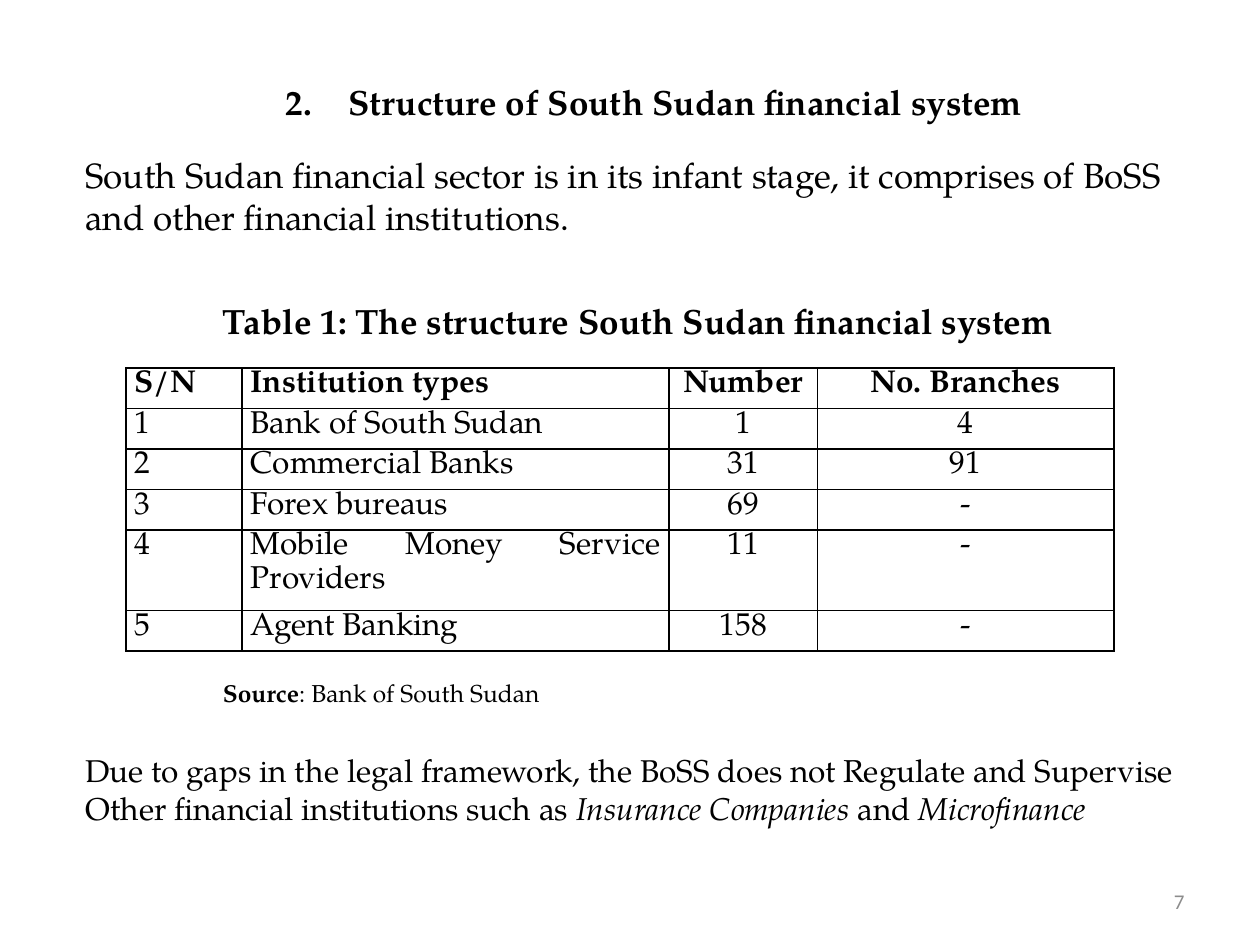
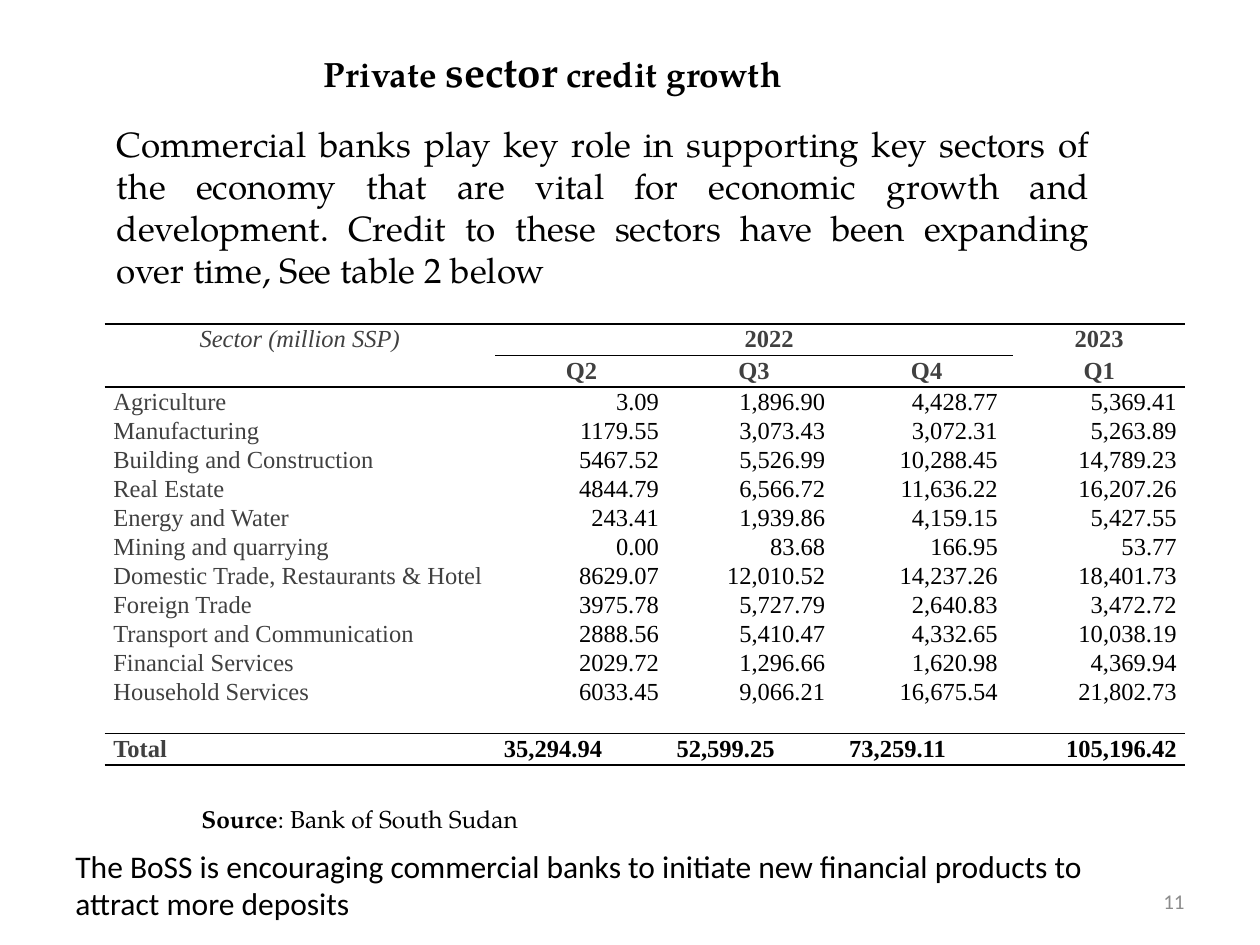
"""Build two slides on the structure of the financial system and private sector credit."""
from dataclasses import dataclass
from typing import Optional

from lxml.etree import SubElement
from pptx import Presentation
from pptx.dml.color import RGBColor
from pptx.enum.text import MSO_ANCHOR, PP_ALIGN
from pptx.oxml.ns import qn
from pptx.slide import Slide
from pptx.table import Table, _Cell
from pptx.text.text import TextFrame, _Paragraph
from pptx.util import Inches, Pt


@dataclass(frozen=True)
class Theme:
    """Colours, fonts and type sizes shared by the slides."""
    ink: str = "000000"
    label: str = "404040"
    page: str = "8C8C8C"
    serif: str = "TeX Gyre Pagella"
    figures: str = "Times New Roman"
    sans: str = "Calibri"
    accent_size: float = 24
    lead_size: float = 20
    body_size: float = 18
    small_size: float = 14
    page_size: float = 12
    cell_spacing: float = 1.07
    thin: float = 1
    thick: float = 1.5


THEME = Theme()


@dataclass(frozen=True)
class Span:
    """A stretch of text in one style."""
    text: str
    size: float = THEME.lead_size
    bold: bool = False
    italic: bool = False
    font: str = THEME.serif
    color: str = THEME.ink


@dataclass(frozen=True)
class Block:
    """A text box holding one paragraph."""
    left: float
    top: float
    width: float
    height: float
    spans: tuple[Span, ...]
    align: PP_ALIGN = PP_ALIGN.LEFT
    indent: float = 0
    number: Optional[int] = None
    anchor: MSO_ANCHOR = MSO_ANCHOR.TOP


@dataclass(frozen=True)
class Entry:
    """A table cell whose lines share one style."""
    lines: tuple[str, ...]
    align: PP_ALIGN
    size: float
    font: str
    bold: bool = False
    italic: bool = False
    color: str = THEME.ink
    inset_left: float = 0.07
    inset_right: float = 0.07


@dataclass(frozen=True)
class Grid:
    """A table with the width of each horizontal rule by boundary and column."""
    left: float
    top: float
    columns: tuple[float, ...]
    rows: tuple[float, ...]
    entries: dict[tuple[int, int], Entry]
    rules: tuple[tuple[float, ...], ...]
    side_rule: float = 0
    merges: tuple[tuple[int, int, int, int], ...] = ()


def add_span(paragraph: _Paragraph, span: Span) -> None:
    """Append a styled run to a paragraph."""
    run = paragraph.add_run()
    run.text = span.text
    run.font.size = Pt(span.size)
    run.font.name = span.font
    run.font.bold = span.bold
    run.font.italic = span.italic
    run.font.color.rgb = RGBColor.from_string(span.color)


def indent_paragraph(paragraph: _Paragraph, block: Block) -> None:
    """Indent a heading and number it when it has a number."""
    properties = paragraph._p.get_or_add_pPr()
    properties.set("marL", str(Inches(block.indent)))
    if block.number is not None:
        properties.set("indent", str(Inches(-0.5)))
        SubElement(properties, qn("a:buFont"), typeface="+mj-lt")
        SubElement(properties, qn("a:buAutoNum"), type="arabicPeriod", startAt=str(block.number))


def add_block(slide: Slide, block: Block) -> None:
    """Draw a text box."""
    frame: TextFrame = slide.shapes.add_textbox(
        Inches(block.left), Inches(block.top), Inches(block.width), Inches(block.height)).text_frame
    frame.word_wrap = True
    frame.vertical_anchor = block.anchor
    paragraph = frame.paragraphs[0]
    if block.indent:
        indent_paragraph(paragraph, block)
    paragraph.alignment = block.align
    for span in block.spans:
        add_span(paragraph, span)


def add_page_number(slide: Slide, number: int) -> None:
    """Draw the page number at the lower right."""
    span = Span(str(number), THEME.page_size, font=THEME.sans, color=THEME.page)
    add_block(slide, Block(7.17, 6.95, 2.33, 0.4, (span,), PP_ALIGN.RIGHT, anchor=MSO_ANCHOR.MIDDLE))


def add_source(slide: Slide, left: float, top: float) -> None:
    """Draw the source line below a table."""
    spans = (Span("Source", THEME.small_size, bold=True),
             Span(": Bank of South Sudan", THEME.small_size))
    add_block(slide, Block(left, top, 6.5, 0.34, spans, PP_ALIGN.JUSTIFY))


def set_borders(cell: _Cell, side: float, top: float, bottom: float) -> None:
    """Rule the edges of a cell, leaving edges of zero width blank."""
    properties = cell._tc.get_or_add_tcPr()
    for tag, width in (("a:lnL", side), ("a:lnR", side), ("a:lnT", top), ("a:lnB", bottom)):
        line = SubElement(properties, qn(tag), w=str(Pt(width)))
        if width:
            fill = SubElement(line, qn("a:solidFill"))
            SubElement(fill, qn("a:srgbClr"), val=THEME.ink)
        else:
            SubElement(line, qn("a:noFill"))


def fill_cell(cell: _Cell, entry: Entry) -> None:
    """Write the lines of an entry into a cell."""
    cell.margin_left, cell.margin_right = Inches(entry.inset_left), Inches(entry.inset_right)
    cell.margin_top = cell.margin_bottom = 0
    frame = cell.text_frame
    for index, line in enumerate(entry.lines):
        paragraph = frame.add_paragraph() if index else frame.paragraphs[0]
        paragraph.alignment = entry.align
        paragraph.line_spacing = THEME.cell_spacing
        add_span(paragraph, Span(line, entry.size, entry.bold, entry.italic, entry.font, entry.color))


def add_grid(slide: Slide, grid: Grid) -> None:
    """Draw a ruled table."""
    table: Table = slide.shapes.add_table(
        len(grid.rows), len(grid.columns), Inches(grid.left), Inches(grid.top),
        Inches(sum(grid.columns)), Inches(sum(grid.rows))).table
    table.first_row = table.horz_banding = False
    for column, width in zip(table.columns, grid.columns):
        column.width = Inches(width)
    for row, height in zip(table.rows, grid.rows):
        row.height = Inches(height)
    for top, left, bottom, right in grid.merges:
        table.cell(top, left).merge(table.cell(bottom, right))
    for row in range(len(grid.rows)):
        for column in range(len(grid.columns)):
            cell = table.cell(row, column)
            last = row + (cell.span_height if cell.is_merge_origin else 1)
            set_borders(cell, grid.side_rule, grid.rules[row][column], grid.rules[last][column])
            cell.fill.background()
            if (row, column) in grid.entries:
                fill_cell(cell, grid.entries[row, column])


INSTITUTIONS = (
    ("S/N", "Institution types", "Number", "No. Branches"),
    ("1", "Bank of South Sudan", "1", "4"),
    ("2", "Commercial Banks", "31", "91"),
    ("3", "Forex bureaus", "69", "-"),
    ("4", "Mobile Money Service Providers", "11", "-"),
    ("5", "Agent Banking", "158", "-"),
)

SECTOR_CREDIT = (
    ("Agriculture", "3.09", "1,896.90", "4,428.77", "5,369.41"),
    ("Manufacturing", "1179.55", "3,073.43", "3,072.31", "5,263.89"),
    ("Building and Construction", "5467.52", "5,526.99", "10,288.45", "14,789.23"),
    ("Real Estate", "4844.79", "6,566.72", "11,636.22", "16,207.26"),
    ("Energy and Water", "243.41", "1,939.86", "4,159.15", "5,427.55"),
    ("Mining and quarrying", "0.00", "83.68", "166.95", "53.77"),
    ("Domestic Trade, Restaurants & Hotel", "8629.07", "12,010.52", "14,237.26", "18,401.73"),
    ("Foreign Trade", "3975.78", "5,727.79", "2,640.83", "3,472.72"),
    ("Transport and Communication", "2888.56", "5,410.47", "4,332.65", "10,038.19"),
    ("Financial Services", "2029.72", "1,296.66", "1,620.98", "4,369.94"),
    ("Household Services", "6033.45", "9,066.21", "16,675.54", "21,802.73"),
)
TOTALS = ("Total", "35,294.94", "52,599.25", "73,259.11", "105,196.42")


def institution_grid() -> Grid:
    """Lay out the table of institution types."""
    entries = {
        (row, column): Entry((text,), PP_ALIGN.JUSTIFY if column < 2 else PP_ALIGN.CENTER,
                             THEME.body_size, THEME.serif, bold=row == 0)
        for row, texts in enumerate(INSTITUTIONS) for column, text in enumerate(texts)}
    return Grid(1, 2.92, (0.92, 3.39, 1.18, 2.35), (0.32, 0.32, 0.32, 0.32, 0.64, 0.32),
                entries, ((THEME.thin,) * 4,) * 7, THEME.thin)


def credit_grid() -> Grid:
    """Lay out the table of credit by sector and quarter."""
    def entry(*lines: str, align: PP_ALIGN = PP_ALIGN.CENTER, **style) -> Entry:
        """Make an entry in the style of this table."""
        return Entry(lines, align, THEME.small_size, THEME.figures, **style)

    heading = {"bold": True, "color": THEME.label}
    entries = {
        (0, 0): entry("Sector (million SSP)", italic=True, color=THEME.label),
        (0, 1): entry("2022", inset_left=0.31, **heading),
        (0, 4): entry("2023", **heading),
    }
    for column, quarter in enumerate(("Q2", "Q3", "Q4", "Q1"), start=1):
        entries[1, column] = entry(quarter, **heading)
    for column, (lines, total) in enumerate(zip(zip(*SECTOR_CREDIT), TOTALS)):
        color = THEME.ink if column else THEME.label
        entries[2, column] = entry(*lines, align=PP_ALIGN.RIGHT if column else PP_ALIGN.LEFT,
                                   color=color, inset_right=0.12 if column in (2, 3) else 0.07)
        entries[3, column] = entry(total, align=PP_ALIGN.RIGHT if column == 4 else PP_ALIGN.LEFT,
                                   bold=True, color=color)
    full, quarters = (THEME.thin,) * 5, (0, THEME.thin, THEME.thin, THEME.thin, 0)
    return Grid(0.83, 2.57, (3.1, 1.37, 1.37, 1.37, 1.37), (0.25, 0.25, 2.75, 0.25), entries,
                (full, quarters, (THEME.thick,) * 5, full, full), merges=((0, 0, 1, 0), (0, 1, 0, 3)))


def build_structure(slide: Slide) -> None:
    """Draw the slide on the structure of the financial system."""
    body = THEME.body_size
    add_page_number(slide, 7)
    add_block(slide, Block(1.67, 0.59, 6.7, 0.44, (
        Span("Structure of South Sudan financial system", bold=True),), indent=1, number=2))
    add_block(slide, Block(0.58, 1.17, 8.83, 0.77, (
        Span("South Sudan financial sector is in its infant stage, it comprises of BoSS "
             "and other financial institutions."),)))
    add_block(slide, Block(0.58, 5.91, 8.83, 1.01, (
        Span("Due to gaps in the legal framework, the BoSS does not Regulate and Supervise "
             "Other financial institutions such as ", body),
        Span("Insurance Companies ", body, italic=True),
        Span("and ", body),
        Span("Microfinance", body, italic=True)), PP_ALIGN.JUSTIFY))
    add_grid(slide, institution_grid())
    add_block(slide, Block(1.17, 2.33, 7.5, 0.44, (
        Span("Table 1: The structure South Sudan financial system", bold=True),), indent=0.5))
    add_source(slide, 1.67, 5.33)


def build_credit(slide: Slide) -> None:
    """Draw the slide on private sector credit growth."""
    add_page_number(slide, 11)
    add_block(slide, Block(1.97, 0.31, 5.42, 0.5, (
        Span("Private ", bold=True),
        Span("sector", THEME.accent_size, bold=True),
        Span(" credit growth", bold=True)), indent=0.5))
    add_block(slide, Block(0.5, 6.67, 8.25, 0.71, (
        Span("The BoSS is encouraging commercial banks to initiate new financial products to "
             "attract more deposits", THEME.body_size, font=THEME.sans),)))
    add_block(slide, Block(0.83, 0.92, 7.92, 1.45, (
        Span("Commercial banks play key role in supporting key sectors of the economy that are "
             "vital for economic growth and development. Credit to these sectors have been "
             "expanding over time, See table 2 below"),), PP_ALIGN.JUSTIFY))
    add_grid(slide, credit_grid())
    add_source(slide, 1.5, 6.33)


def main() -> None:
    """Build and save the presentation."""
    presentation = Presentation()
    presentation.slide_width, presentation.slide_height = Inches(10), Inches(7.5)
    for build in (build_structure, build_credit):
        build(presentation.slides.add_slide(presentation.slide_layouts[6]))
    presentation.save("out.pptx")


if __name__ == "__main__":
    main()
